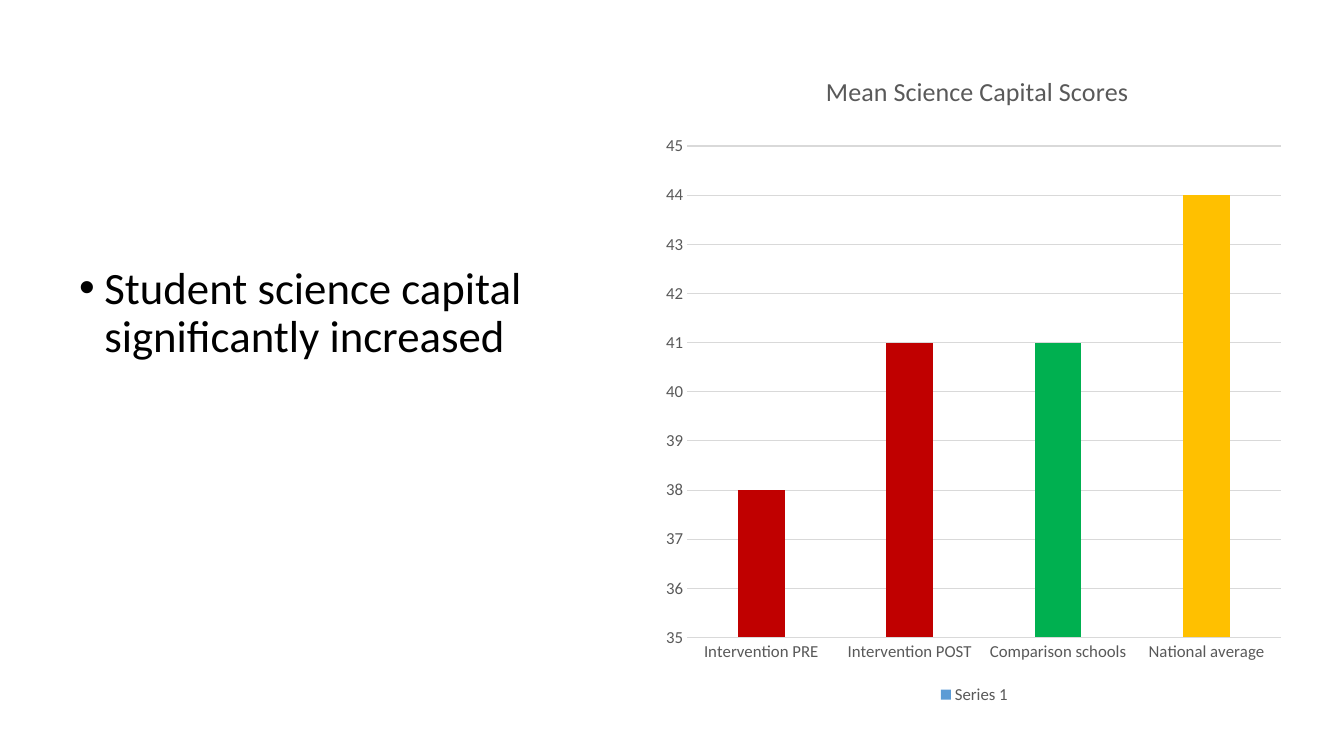
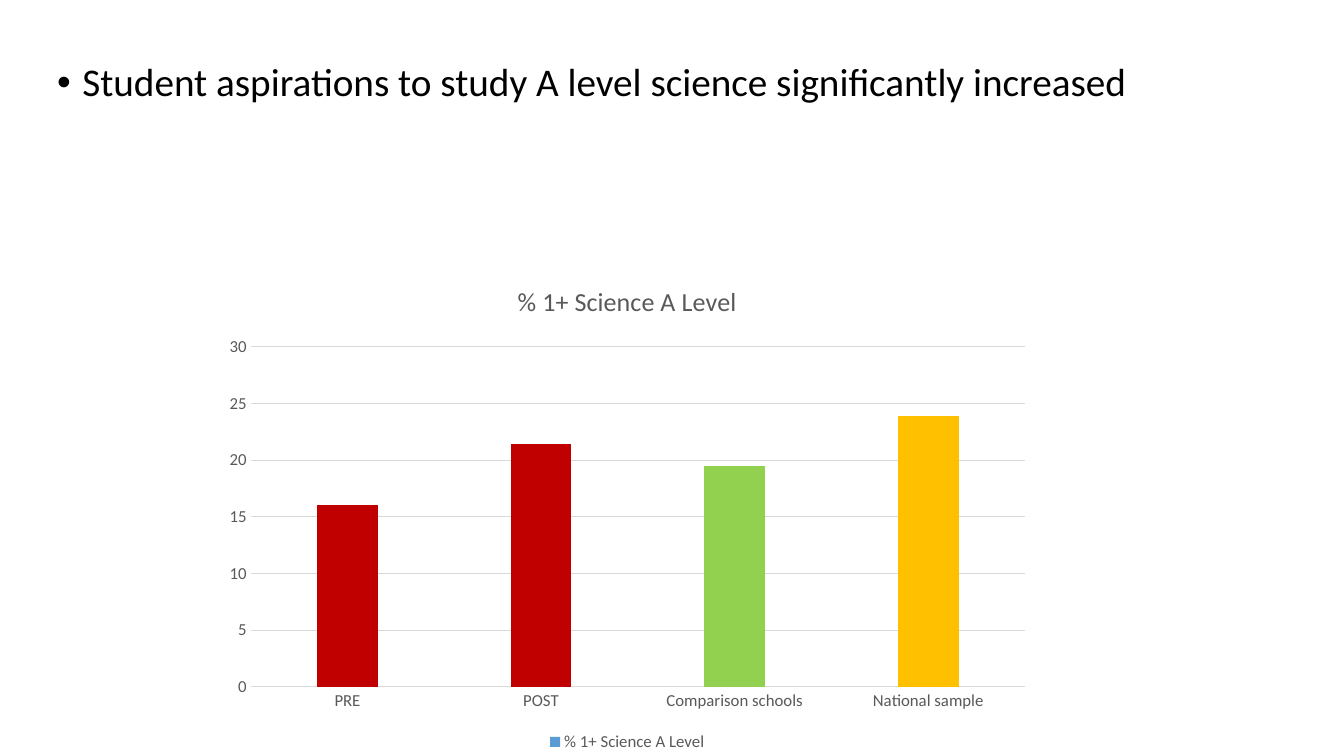
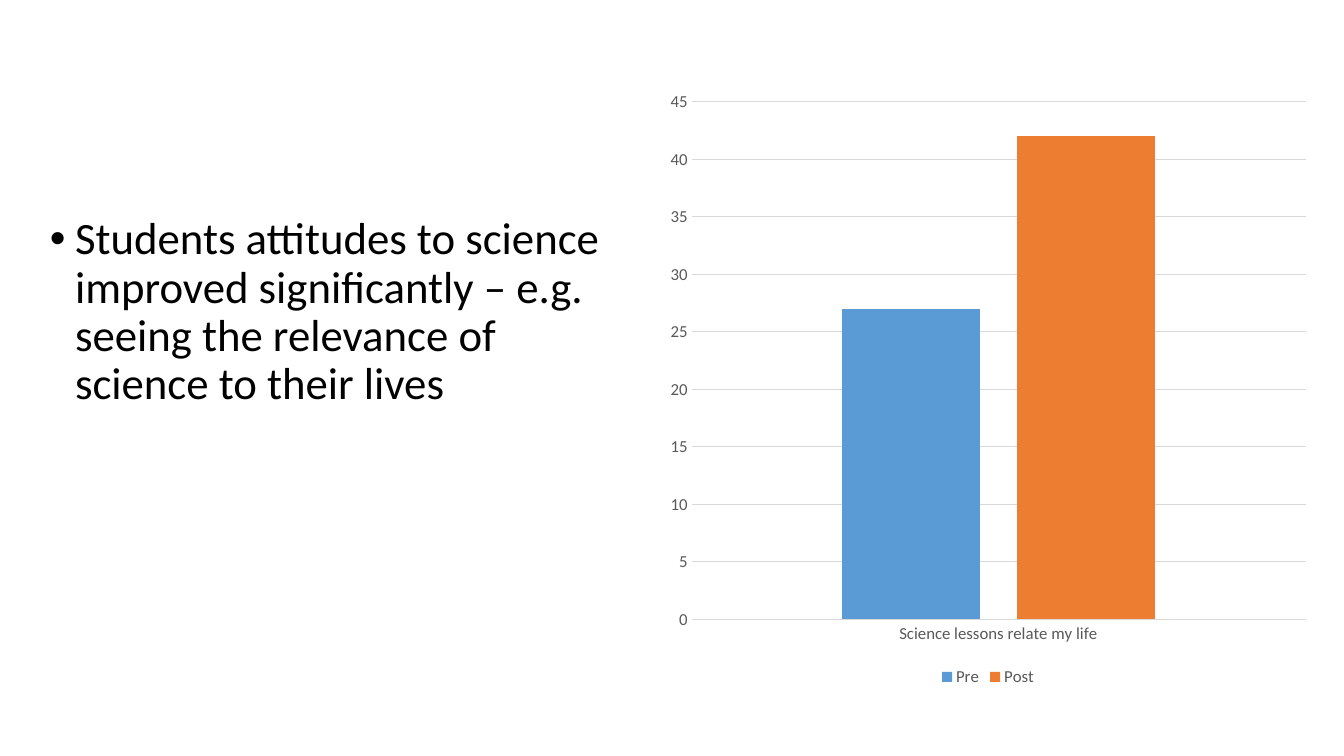
from dataclasses import dataclass

from pptx import Presentation
from pptx import util as u
from pptx.chart import data as chart_data
from pptx.dml import color
from pptx.enum import chart as ch
from pptx.oxml import ns, parse_xml

PX = 9525


@dataclass(frozen=True)
class Theme:
    """Colours, font and type sizes shared by the slides."""
    font: str = "Calibri"
    ink: str = "000000"
    muted: str = "595959"
    rule: str = "D9D9D9"
    blue: str = "5B9BD5"
    orange: str = "ED7D31"
    red: str = "C00000"
    green: str = "00B050"
    lime: str = "92D050"
    gold: str = "FFC000"
    body: int = 32
    wide_body: int = 28
    chart_title: float = 18.6
    label: int = 12


THEME = Theme()


def px(*lengths):
    """Turn pixel lengths into EMU."""
    return [u.Emu(length * PX) for length in lengths]


def rgb(value):
    """Return the colour for a hex string."""
    return color.RGBColor.from_string(value)


def style_font(font, size, ink):
    """Set face, size and colour of a font."""
    font.name = THEME.font
    font.size = u.Pt(size)
    font.bold = False
    font.color.rgb = rgb(ink)


def paint(fill, value):
    """Give a fill one solid colour."""
    fill.solid()
    fill.fore_color.rgb = rgb(value)


def rule_line(line):
    """Style a line as a thin chart rule."""
    line.width = u.Pt(0.75)
    line.color.rgb = rgb(THEME.rule)


def add_bullet(slide, place, words, size):
    """Add a text box holding one bulleted statement."""
    frame = slide.shapes.add_textbox(*px(*place)).text_frame
    frame.word_wrap = True
    para = frame.paragraphs[0]
    para.text = words
    para.line_spacing = 0.9
    para.space_before = u.Pt(10)
    style_font(para.font, size, THEME.ink)
    props = para._p.get_or_add_pPr()
    indent = 24 * PX
    props.set("marL", str(indent))
    props.set("indent", str(-indent))
    defaults = props.find(ns.qn("a:defRPr"))
    for tag in ('<a:buFont %s typeface="Arial"/>', '<a:buChar %s char="•"/>'):
        defaults.addprevious(parse_xml(tag % ns.nsdecls("a")))


def place_part(part, index, **fractions):
    """Fix a chart part at fractions of the chart frame."""
    for old in part.findall(ns.qn("c:layout")):
        part.remove(old)
    target = '<c:layoutTarget val="inner"/>' if "w" in fractions else ""
    modes = "".join(f'<c:{axis}Mode val="edge"/>' for axis in "xy")
    sizes = "".join(f'<c:{key} val="{value}"/>' for key, value in fractions.items())
    part.insert(index, parse_xml(
        f'<c:layout {ns.nsdecls("c")}><c:manualLayout>{target}{modes}{sizes}'
        '</c:manualLayout></c:layout>'))


def style_axes(chart, low, high, step):
    """Set the scale, labels and rules of both axes."""
    for axis in (chart.category_axis, chart.value_axis):
        axis.major_tick_mark = axis.minor_tick_mark = ch.XL_TICK_MARK.NONE
        style_font(axis.tick_labels.font, THEME.label, THEME.muted)
    rule_line(chart.category_axis.format.line)
    values = chart.value_axis
    values.minimum_scale, values.maximum_scale = low, high
    values.major_unit = step
    values.format.line.fill.background()
    values.has_major_gridlines = True
    rule_line(values.major_gridlines.format.line)


def add_columns(slide, place, categories, series, scale, title=None, points=()):
    """Add a clustered column chart; series are (name, values, colour)."""
    data = chart_data.CategoryChartData()
    data.categories = categories
    for name, values, _ in series:
        data.add_series(name, values)
    chart = slide.shapes.add_chart(
        ch.XL_CHART_TYPE.COLUMN_CLUSTERED, *px(*place), data).chart
    style_font(chart.font, 10, THEME.ink)
    chart.has_title = title is not None
    if title:
        para = chart.chart_title.text_frame.paragraphs[0]
        para.text = title
        style_font(para.font, THEME.chart_title, THEME.muted)
    chart.has_legend = True
    chart.legend.position = ch.XL_LEGEND_POSITION.BOTTOM
    chart.legend.include_in_layout = False
    style_font(chart.legend.font, THEME.label, THEME.muted)
    style_axes(chart, *scale)
    plot = chart.plots[0]
    plot.vary_by_categories = False
    plot.gap_width, plot.overlap = 219, -27
    for bars, (_, _, fill) in zip(plot.series, series):
        paint(bars.format.fill, fill)
    for index, fill in enumerate(points):
        paint(plot.series[0].points[index].format.fill, fill)
    return chart


def main():
    """Build and save the deck."""
    deck = Presentation()
    deck.slide_width, deck.slide_height = px(1280, 720)
    capital, aspirations, attitudes = (
        deck.slides.add_slide(deck.slide_layouts[6]) for _ in range(3))

    add_bullet(capital, (66, 248, 502, 159),
               "Student science capital significantly increased", THEME.body)
    scores = add_columns(
        capital, (624, 59, 608, 616),
        ["Intervention PRE", "Intervention POST", "Comparison schools", "National average"],
        [("Series 1", [38, 41, 41, 44], THEME.blue)], (35, 45, 1),
        "Mean Science Capital Scores",
        (THEME.red, THEME.red, THEME.green, THEME.gold))
    place_part(scores.chart_title._element, 1, x=0.26, y=0.01)
    place_part(scores.plots[0]._element.getparent(), 0, x=0.05, y=0.13, w=0.93, h=0.76)

    add_bullet(aspirations, (45, 55, 1104, 126),
               "Student aspirations to study A level science significantly increased",
               THEME.wide_body)
    add_columns(
        aspirations, (203, 251, 789, 469),
        ["PRE", "POST", "Comparison schools", "National sample"],
        [("% 1+ Science A Level", [16, 21.4, 19.5, 23.9], THEME.blue)], (0, 30, 5),
        "% 1+ Science A Level",
        (THEME.red, THEME.red, THEME.lime, THEME.gold))

    add_bullet(attitudes, (38, 201, 569, 228),
               "Students attitudes to science improved significantly – e.g. "
               "seeing the relevance of science to their lives", THEME.body)
    add_columns(
        attitudes, (626, 76, 630, 582), ["Science lessons relate my life"],
        [("Pre", [27], THEME.blue), ("Post", [42], THEME.orange)], (0, 45, 5))

    deck.save("out.pptx")


if __name__ == "__main__":
    main()
